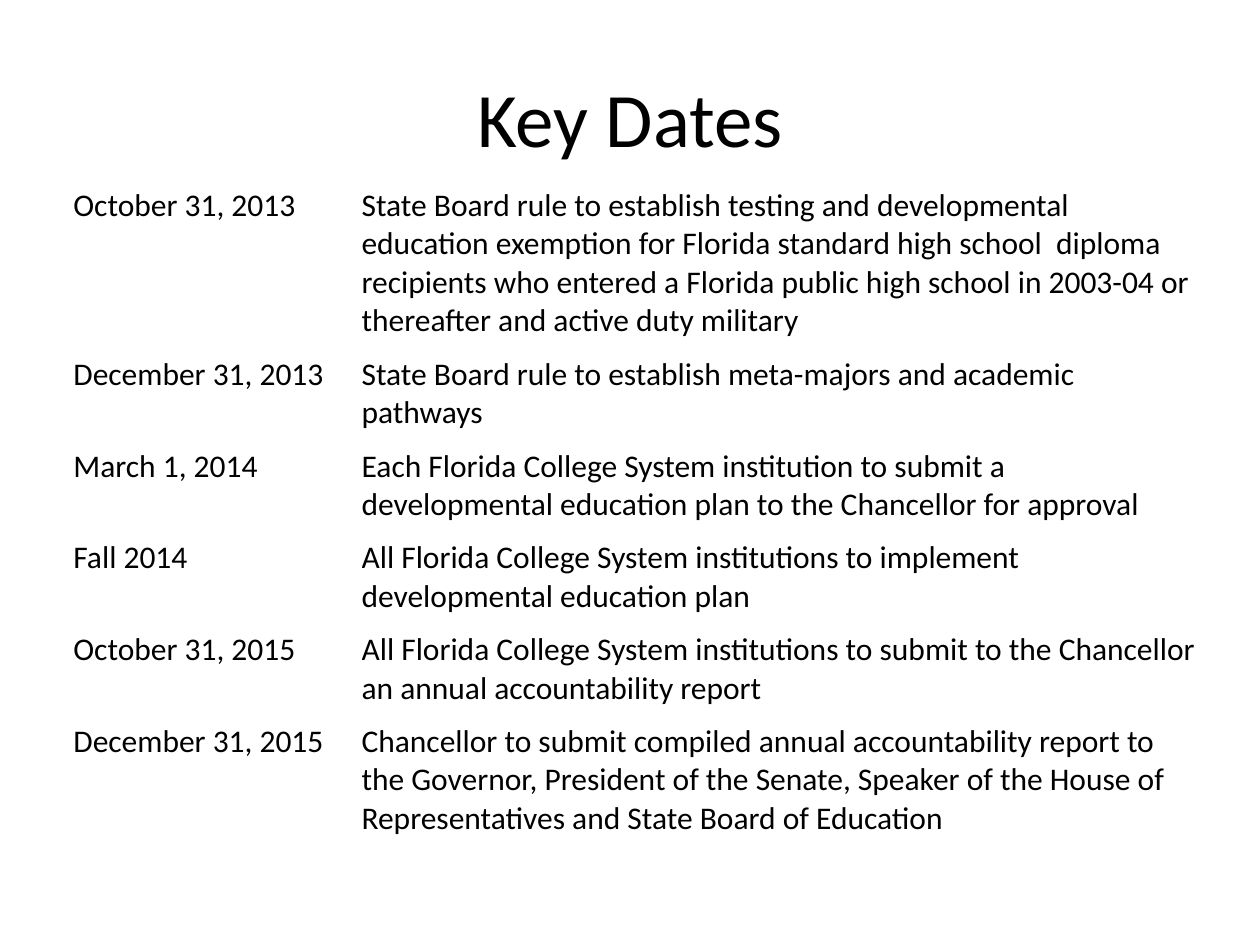
"""Build the key dates slide."""
from dataclasses import dataclass

from pptx import Presentation
from pptx.dml.color import RGBColor
from pptx.enum.text import MSO_ANCHOR, PP_ALIGN
from pptx.util import Cm, Pt


@dataclass(frozen=True)
class Theme:
    """Hold the font, colours and type sizes."""
    font: str = "Calibri"
    ink: RGBColor = RGBColor(0, 0, 0)
    paper: RGBColor = RGBColor(255, 255, 255)
    head: int = 44
    body: int = 18


@dataclass(frozen=True)
class Event:
    """Pair a date with its task and row height in centimetres."""
    date: str
    task: str
    high: float = 1.6


THEME = Theme()
WIDTHS = (5.81, 16.85)
EVENTS = (
    Event("October 31, 2013",
          "State Board rule to establish testing and developmental education "
          "exemption for Florida standard high school  diploma recipients who "
          "entered a Florida public high school in 2003-04 or thereafter and "
          "active duty military", 2.21),
    Event("December 31, 2013",
          "State Board rule to establish meta-majors and academic pathways", 0.99),
    Event("March 1, 2014",
          "Each Florida College System institution to submit a developmental "
          "education plan to the Chancellor for approval"),
    Event("Fall 2014",
          "All Florida College System institutions to implement developmental "
          "education plan"),
    Event("October 31, 2015",
          "All Florida College System institutions to submit to the Chancellor "
          "an annual accountability report"),
    Event("December 31, 2015",
          "Chancellor to submit compiled annual accountability report to the "
          "Governor, President of the Senate, Speaker of the House of "
          "Representatives and State Board of Education", 2.21),
)


def write(frame, text: str, *, size: int = THEME.body, align=PP_ALIGN.LEFT) -> None:
    """Put formatted text in a frame."""
    par = frame.paragraphs[0]
    par.alignment = align
    run = par.add_run()
    run.text = text
    run.font.name = THEME.font
    run.font.size = Pt(size)
    run.font.color.rgb = THEME.ink


def draw_title(slide, text: str) -> None:
    """Place and fill the title."""
    title = slide.shapes.title
    title.left, title.top = Cm(1.27), Cm(0.76)
    title.width, title.height = Cm(22.86), Cm(3.18)
    title.text_frame.vertical_anchor = MSO_ANCHOR.MIDDLE
    write(title.text_frame, text, size=THEME.head, align=PP_ALIGN.CENTER)


def draw_cell(cell, text: str) -> None:
    """Fill one plain table cell."""
    cell.fill.background()
    cell.margin_left = cell.margin_right = 0
    cell.margin_top = cell.margin_bottom = Cm(0.15)
    cell.vertical_anchor = MSO_ANCHOR.TOP
    write(cell.text_frame, text)


def draw_dates(slide, events: tuple[Event, ...]) -> None:
    """Draw the table of dates and tasks."""
    high = sum(event.high for event in events)
    table = slide.shapes.add_table(
        len(events), len(WIDTHS), Cm(1.48), Cm(3.61), Cm(sum(WIDTHS)), Cm(high)
    ).table
    table.first_row = table.horz_banding = False
    for col, width in zip(table.columns, WIDTHS):
        col.width = Cm(width)
    for row, event in zip(table.rows, events):
        row.height = Cm(event.high)
        for cell, text in zip(row.cells, (event.date, event.task)):
            draw_cell(cell, text)


def main() -> None:
    """Build and save the deck."""
    deck = Presentation()
    deck.slide_width, deck.slide_height = Cm(25.4), Cm(19.05)
    slide = deck.slides.add_slide(deck.slide_layouts[5])
    slide.background.fill.solid()
    slide.background.fill.fore_color.rgb = THEME.paper
    draw_title(slide, "Key Dates")
    draw_dates(slide, EVENTS)
    deck.save("out.pptx")


if __name__ == "__main__":
    main()
